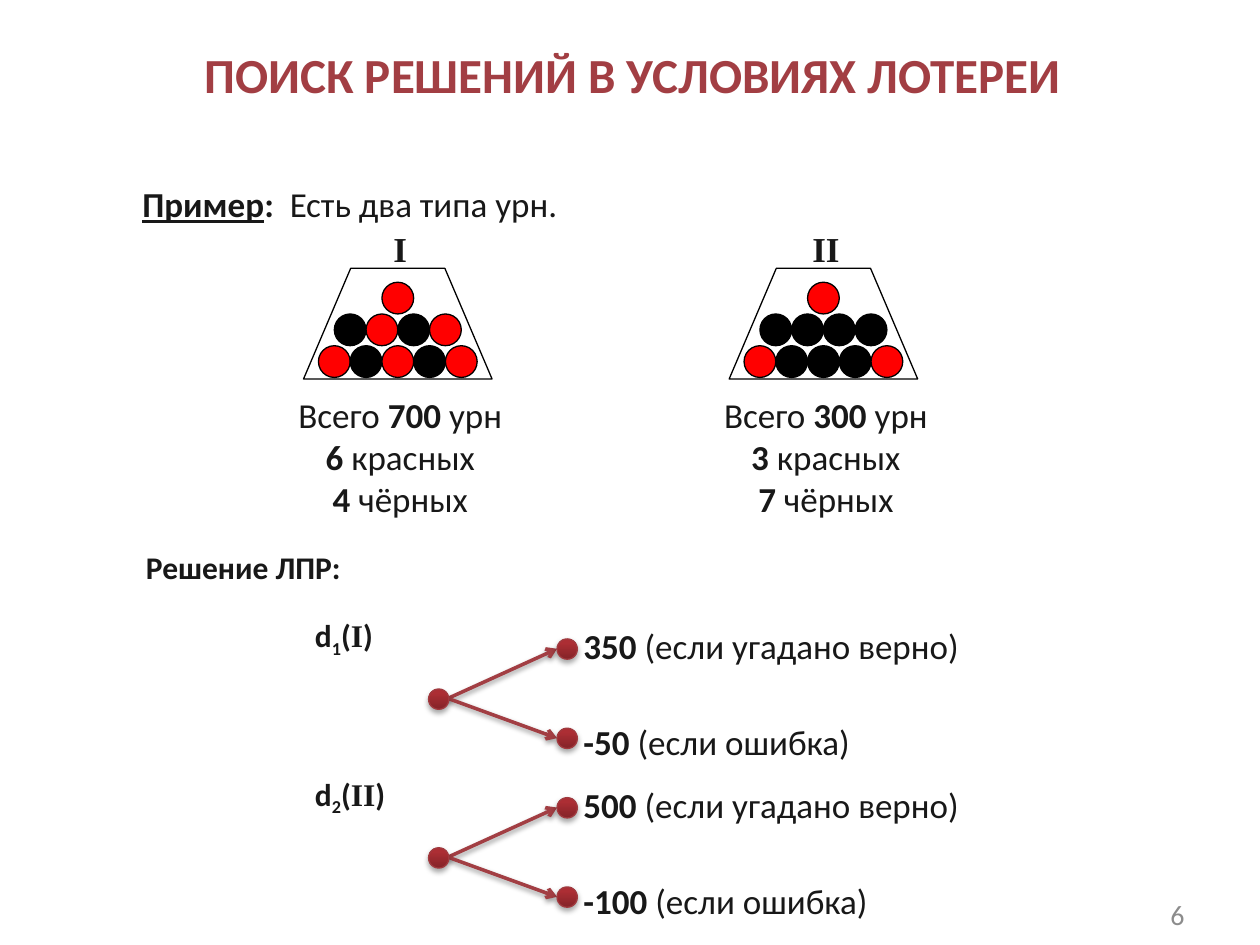
from lxml.etree import SubElement
from pptx import Presentation
from pptx.dml.color import RGBColor
from pptx.enum.shapes import MSO_CONNECTOR, MSO_SHAPE
from pptx.enum.text import MSO_ANCHOR, PP_ALIGN
from pptx.oxml.ns import qn
from pptx.util import Cm, Pt

HUES = {"ink": "181818", "title": "A23E43", "page": "8C8C8C",
        "red": "FF0000", "black": "000000", "white": "FFFFFF",
        "rim": "A13A3F", "dark": "842328", "light": "AC2E34"}
RGB = {name: RGBColor.from_string(code) for name, code in HUES.items()}

deck = Presentation()
deck.slide_width, deck.slide_height = Cm(25.4), Cm(19.05)
slide = deck.slides.add_slide(deck.slide_layouts[6])
shapes = slide.shapes


def write(x, y, w, h, rows, size=20, hue="ink", align=PP_ALIGN.LEFT, face="Calibri"):
    """Add a text box; each row is a list of (text, bold) runs."""
    frame = shapes.add_textbox(Cm(x), Cm(y), Cm(w), Cm(h)).text_frame
    frame.word_wrap = True
    for i, row in enumerate(rows):
        para = frame.add_paragraph() if i else frame.paragraphs[0]
        para.alignment = align
        para.font.size = Pt(size)
        para.font.name = face
        para.font.color.rgb = RGB[hue]
        for text, bold in row:
            run = para.add_run()
            run.text = text
            run.font.bold = bold
    return frame


def shade(shape, alpha, dist):
    """Give the shape a soft shadow straight below it."""
    props = shape._element.spPr
    effects = props.find(qn("a:effectLst"))
    if effects is None:
        effects = SubElement(props, qn("a:effectLst"))
    cast = SubElement(effects, qn("a:outerShdw"), blurRad=str(Pt(3.1)),
                      dist=str(Pt(dist)), dir="5400000", rotWithShape="0")
    tint = SubElement(cast, qn("a:srgbClr"), val=HUES["black"])
    SubElement(tint, qn("a:alpha"), val=str(alpha * 1000))


# Heading and intro
write(0.1, 0.78, 25.3, 1.4, [[("ПОИСК РЕШЕНИЙ В УСЛОВИЯХ ЛОТЕРЕИ", True)]],
      28, "title", PP_ALIGN.CENTER)
intro = write(2.62, 3.56, 19.48, 1.1,
              [[("Пример", True), (":  ", True), ("Есть два типа урн.", False)]])
intro.paragraphs[0].runs[0].font.underline = True

# Urns: R is a red ball, B a black one
BALL = 0.64
urns = [(8.02, "I", "700", "6", "4", ["R", "BRBR", "RBRBR"]),
        (16.6, "II", "300", "3", "7", ["R", "BBBB", "RBBBR"])]
for mid, name, total, reds, blacks, rows in urns:
    write(mid - 1.4, 4.47, 2.9, 1.06, [[(name, True)]],
          align=PP_ALIGN.CENTER, face="Times New Roman")
    top, base = Cm(5.41), Cm(7.64)
    path = shapes.build_freeform(Cm(mid - 1.9), base)
    path.add_line_segments([(Cm(mid - 0.95), top), (Cm(mid + 0.95), top),
                            (Cm(mid + 1.9), base)], close=True)
    urn = path.convert_to_shape()
    parts = [(urn, "white")]
    for i, row in enumerate(rows):
        left = mid - len(row) * BALL / 2
        for j, kind in enumerate(row):
            ball = shapes.add_shape(MSO_SHAPE.OVAL, Cm(left + j * BALL),
                                    Cm(5.69 + i * BALL), Cm(BALL), Cm(BALL))
            parts.append((ball, "red" if kind == "R" else "black"))
    for part, hue in parts:
        part.shadow.inherit = False
        part.fill.solid()
        part.fill.fore_color.rgb = RGB[hue]
        part.line.color.rgb = RGB["black"]
        part.line.width = Pt(0.75)
    write(mid - 2.9, 7.81, 5.9, 2.8,
          [[("Всего ", False), (total, True), (" урн", False)],
           [(reds, True), (" красных", False)],
           [(blacks, True), (" чёрных", False)]], align=PP_ALIGN.CENTER)

# Decisions
write(2.69, 10.92, 4.5, 1.02, [[("Решение ЛПР:", True)]], 18)
DOT = 0.41
forks = [("1", "I", "350 ", "-50 "), ("2", "II", "500 ", "-100 ")]
for i, (index, name, win, loss) in enumerate(forks):
    y = 12.29 + i * 3.2
    label = write(6.1, y, 2.13, 1.02,
                  [[("d", True), (index, True), ("(", True), (name, True), (")", True)]], 18)
    runs = label.paragraphs[0].runs
    runs[1].font._element.set("baseline", "-25000")
    runs[3].font.name = "Times New Roman"

    for end in (0.79, 2.59):
        arrow = shapes.add_connector(MSO_CONNECTOR.STRAIGHT, Cm(9.03), Cm(y + 1.79),
                                     Cm(11.23), Cm(y + end))
        arrow.line.color.rgb = RGB["title"]
        arrow.line.width = Pt(2)
        SubElement(arrow.line._get_or_add_ln(), qn("a:tailEnd"), type="arrow")
        shade(arrow, 38, 1.6)

    for x, drop in ((8.64, 1.6), (11.23, 0.59), (11.23, 2.39)):
        dot = shapes.add_shape(MSO_SHAPE.OVAL, Cm(x), Cm(y + drop), Cm(DOT), Cm(DOT))
        dot.shadow.inherit = False
        dot.fill.gradient()
        dot.fill.gradient_angle = 90
        start, stop = dot.fill.gradient_stops
        start.color.rgb, start.position = RGB["dark"], 0
        stop.color.rgb, stop.position = RGB["light"], 0.8
        dot.line.color.rgb = RGB["rim"]
        dot.line.width = Pt(0.75)
        shade(dot, 35, 1.8)

    for drop, value, note in ((0.18, win, "(если угадано верно)"),
                              (2.11, loss, "(если ошибка)")):
        write(11.51, y + drop, 8.6, 1.12, [[(value, True), (note, False)]])

page = write(22.71, 17.93, 1.42, 1.02, [[("6", False)]], 16, "page", PP_ALIGN.RIGHT)
page.vertical_anchor = MSO_ANCHOR.MIDDLE

deck.save("out.pptx")
